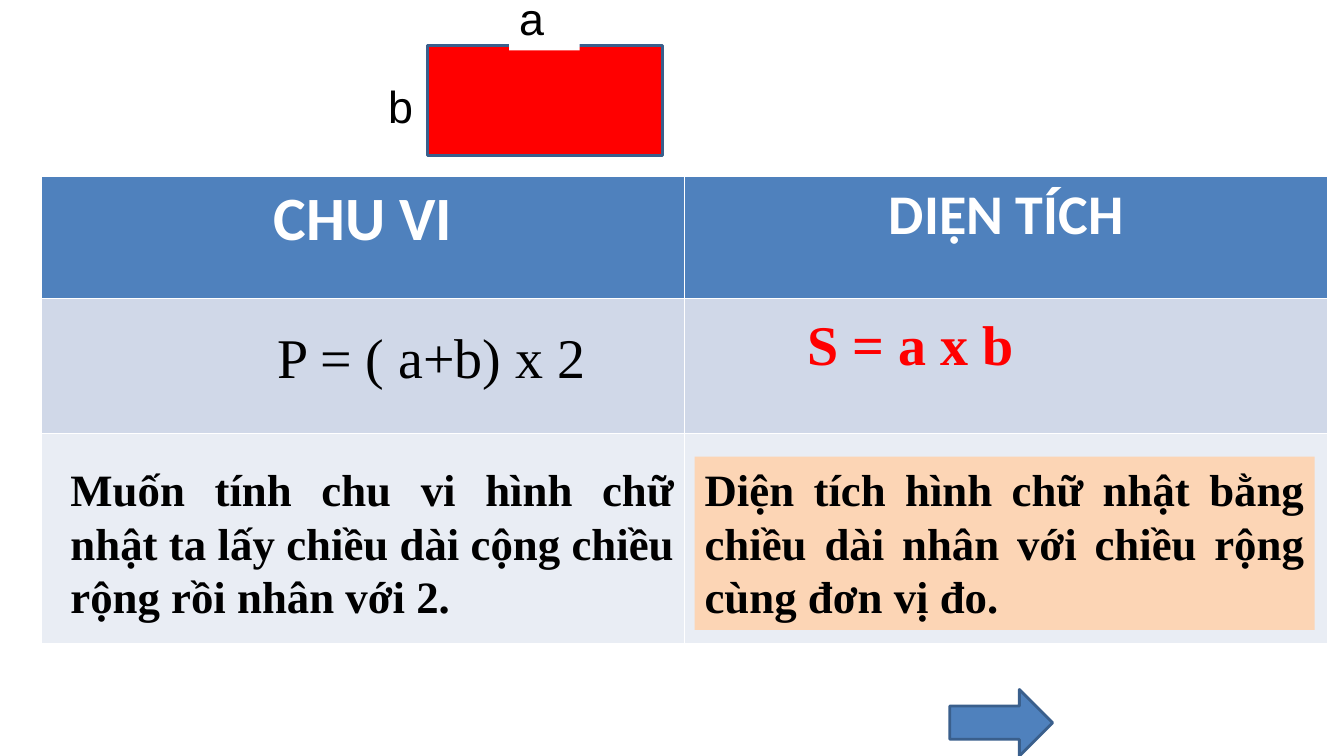
import pptx
import pptx.dml.color
import pptx.enum.shapes
import pptx.enum.text
import pptx.util
from pptx.util import Inches

COLORS = {
    "blue": "4F81BD", "outline": "3A5F8C", "red": "FF0000", "white": "FFFFFF",
    "black": "000000", "band": "D0D8E8", "light_band": "E9EDF4", "peach": "FCD5B5",
}
ALIGN = pptx.enum.text.PP_ALIGN
SHAPE = pptx.enum.shapes.MSO_SHAPE


def color(name):
    return pptx.dml.color.RGBColor.from_string(COLORS[name])


def write(paragraph, text, font_name, size, color_name, bold, align):
    paragraph.text = text
    paragraph.alignment = align
    paragraph.font.name = font_name
    paragraph.font.size = pptx.util.Pt(size)
    paragraph.font.bold = bold
    paragraph.font.color.rgb = color(color_name)


presentation = pptx.Presentation()
presentation.slide_width = Inches(13.33)
presentation.slide_height = Inches(7.5)
slide = presentation.slides.add_slide(presentation.slide_layouts[6])

table = slide.shapes.add_table(
    3, 2, Inches(0.41), Inches(1.75), Inches(12.76), Inches(4.64)
).table
for row, height, fill in zip(table.rows, (1.21, 1.34, 2.09), ("blue", "band", "light_band")):
    row.height = Inches(height)
    for cell in row.cells:
        cell.fill.solid()
        cell.fill.fore_color.rgb = color(fill)
for column, (heading, size) in enumerate((("CHU VI", 44), ("DIỆN TÍCH", 40))):
    paragraph = table.cell(0, column).text_frame.paragraphs[0]
    write(paragraph, heading, "Calibri", size, "white", True, ALIGN.CENTER)

rectangle_diagram = slide.shapes.add_group_shape()
for parent, preset, left, top, width, height, fill in (
    (rectangle_diagram.shapes, SHAPE.RECTANGLE, 4.24, 0.45, 2.33, 1.09, "red"),
    (slide.shapes, SHAPE.RIGHT_ARROW, 9.42, 6.84, 1.02, 0.66, "blue"),
):
    shape = parent.add_shape(preset, Inches(left), Inches(top), Inches(width), Inches(height))
    shape.shadow.inherit = False
    shape.fill.solid()
    shape.fill.fore_color.rgb = color(fill)
    shape.line.color.rgb = color("outline")
    shape.line.width = pptx.util.Pt(2)

perimeter_rule = "Muốn tính chu vi hình chữ nhật ta lấy chiều dài cộng chiều rộng rồi nhân với 2."
area_rule = "Diện tích hình chữ nhật bằng chiều dài nhân với chiều rộng cùng đơn vị đo."
serif = "Times New Roman"
for parent, box, wrap, fill, text, style in (
    (rectangle_diagram, (5.05, -0.14, 0.7, 0.64), True, "white", "a",
     ("Arial", 32, "black", False, ALIGN.LEFT)),
    (rectangle_diagram, (3.75, 0.73, 0.45, 0.64), False, "white", "b",
     ("Arial", 32, "black", False, ALIGN.LEFT)),
    (slide, (2.65, 3.15, 3.55, 0.77), True, None, "P = ( a+b) x 2",
     (serif, 40, "black", False, ALIGN.LEFT)),
    (slide, (7.91, 3.02, 2.27, 0.77), False, None, "S = a x b",
     (serif, 40, "red", True, ALIGN.LEFT)),
    (slide, (0.6, 4.53, 6.19, 1.72), True, None, perimeter_rule,
     (serif, 32, "black", True, ALIGN.JUSTIFY)),
    (slide, (6.89, 4.53, 6.15, 1.72), True, "peach", area_rule,
     (serif, 32, "black", True, ALIGN.JUSTIFY)),
):
    text_box = parent.shapes.add_textbox(*map(Inches, box))
    text_box.text_frame.word_wrap = wrap
    if fill:
        text_box.fill.solid()
        text_box.fill.fore_color.rgb = color(fill)
    write(text_box.text_frame.paragraphs[0], text, *style)

presentation.save("out.pptx")
